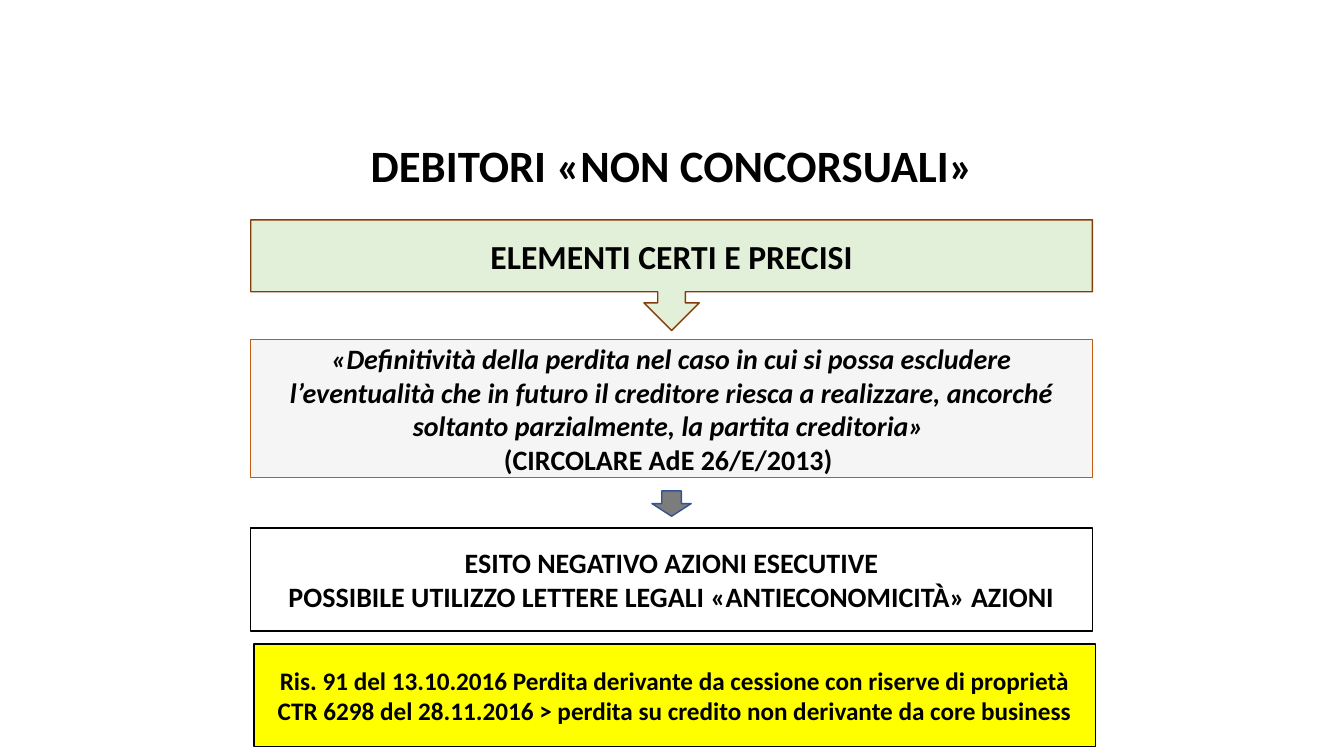
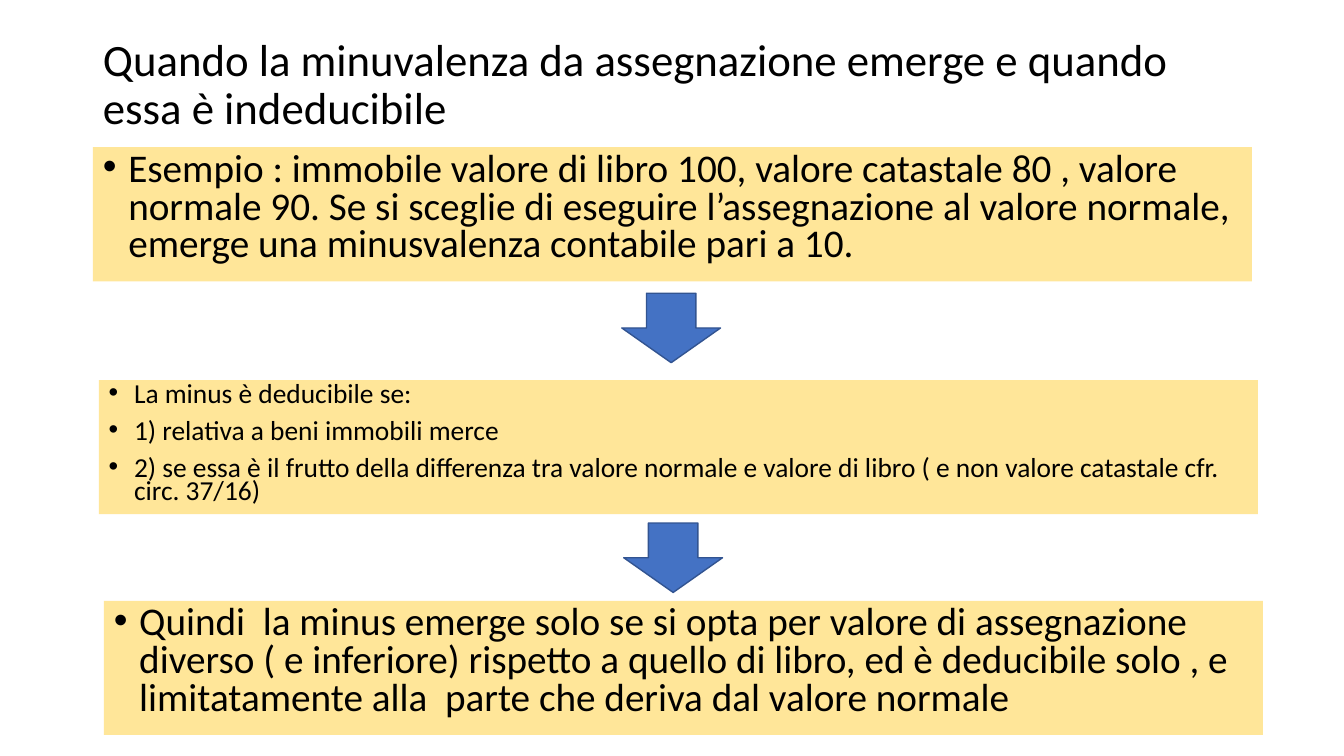
"""Build two slides on credit losses and on capital losses from assignments."""
from dataclasses import dataclass

from lxml import etree
from pptx import Presentation
from pptx import util as u
from pptx.dml.color import RGBColor
from pptx.enum import shapes, text
from pptx.oxml.ns import qn

Kind = shapes.MSO_SHAPE
Align = text.PP_ALIGN
Anchor = text.MSO_ANCHOR


@dataclass(frozen=True)
class Theme:
    """Colours, font and type sizes of the deck."""
    font: str = "Calibri"
    ink: str = "000000"
    white: str = "FFFFFF"
    green: str = "E2F0D9"
    brown: str = "843C0B"
    pale: str = "F5F5F5"
    orange: str = "C55A11"
    yellow: str = "FFFF00"
    sand: str = "FFE699"
    grey: str = "7C7C7C"
    blue: str = "4472C4"
    navy: str = "325491"
    title: float = 32
    lead: float = 28
    heading: float = 24
    body: float = 20
    points: float = 19.6
    note: float = 18


THEME = Theme()


def write(frame, paragraphs, size, bold=False, italics=(), align=Align.LEFT,
          anchor=Anchor.MIDDLE, spacing=1.0, before=0, bullet=False):
    """Fill a text frame with paragraphs; italics lists the slanted ones."""
    frame.word_wrap = True
    frame.auto_size = text.MSO_AUTO_SIZE.NONE
    frame.vertical_anchor = anchor
    for index, words in enumerate(paragraphs):
        para = frame.paragraphs[0] if index == 0 else frame.add_paragraph()
        para.alignment = align
        para.line_spacing = spacing
        para.space_before = u.Pt(before)
        span = para.add_run()
        span.text = words
        span.font.name = THEME.font
        span.font.size = u.Pt(size)
        span.font.bold = bold
        span.font.italic = index in italics
        span.font.color.rgb = RGBColor.from_string(THEME.ink)
        if bullet:
            add_bullet(para)


def add_bullet(para):
    """Give a paragraph a round bullet and a hanging indent."""
    props = para._p.get_or_add_pPr()
    indent = u.Cm(0.64)
    props.set("marL", str(indent))
    props.set("indent", str(-indent))
    etree.SubElement(props, qn("a:buFont")).set("typeface", "Arial")
    etree.SubElement(props, qn("a:buChar")).set("char", "•")


def place(shape, left, top, width, height):
    """Move and size a shape, in centimetres."""
    shape.left, shape.top = u.Cm(left), u.Cm(top)
    shape.width, shape.height = u.Cm(width), u.Cm(height)


def paint(shape, fill, line=None):
    """Set a flat fill and a thin line, or no line."""
    shape.fill.solid()
    shape.fill.fore_color.rgb = RGBColor.from_string(fill)
    if line:
        shape.line.color.rgb = RGBColor.from_string(line)
        shape.line.width = u.Pt(1)
    else:
        shape.line.fill.background()


class Board:
    """Hold the deck and its current slide, and draw elements on it."""

    def __init__(self):
        """Start a widescreen deck."""
        self.deck = Presentation()
        self.deck.slide_width = u.Cm(33.87)
        self.deck.slide_height = u.Cm(19.05)
        self.slide = None

    def page(self, layout):
        """Add a slide with the named layout."""
        self.slide = self.deck.slides.add_slide(
            self.deck.slide_layouts.get_by_name(layout))

    def title(self, words, area, **style):
        """Write the title in its placeholder."""
        holder = self.slide.shapes.title
        place(holder, *area)
        write(holder.text_frame, [words], THEME.title, **style)

    def shape(self, kind, area, fill, line=None):
        """Draw a flat preset shape."""
        shape = self.slide.shapes.add_shape(kind, *map(u.Cm, area))
        shape.shadow.inherit = False
        paint(shape, fill, line)
        return shape

    def box(self, paragraphs, area, fill, line, size, kind=Kind.RECTANGLE, italics=()):
        """Draw a framed box with bold centred text."""
        shape = self.shape(kind, area, fill, line)
        write(shape.text_frame, paragraphs, size, bold=True, italics=italics,
              align=Align.CENTER)

    def arrow(self, area, fill):
        """Draw an arrow that points down."""
        self.shape(Kind.DOWN_ARROW, area, fill, THEME.navy)

    def panel(self, paragraphs, left, top, size, spacing, holder=None):
        """Write a bulleted list on a sand panel."""
        area = (left, top, 29.21, 3.38)
        if holder is None:
            holder = self.shape(Kind.RECTANGLE, area, THEME.sand)
        else:
            place(holder, *area)
            paint(holder, THEME.sand)
        write(holder.text_frame, paragraphs, size, anchor=Anchor.TOP,
              spacing=spacing, before=10, bullet=True)


def debtors(board):
    """Build the slide on debtors outside insolvency."""
    left, width = 6.32, 21.21
    board.page("Title Only")
    board.title("DEBITORI «NON CONCORSUALI»", (4.24, 3.4, 25.4, 1.52),
                bold=True, align=Align.CENTER)
    board.box(["ELEMENTI CERTI E PRECISI"], (left, 5.54, width, 2.79),
              THEME.green, THEME.brown, THEME.heading, kind=Kind.DOWN_ARROW_CALLOUT)
    board.box(["«Definitività della perdita nel caso in cui si possa escludere "
               "l’eventualità che in futuro il creditore riesca a realizzare, "
               "ancorché soltanto parzialmente, la partita creditoria» ",
               "(CIRCOLARE AdE 26/E/2013) "],
              (left, 8.56, width, 3.48), THEME.pale, THEME.orange, THEME.body,
              italics=(0,))
    board.arrow((16.43, 12.37, 0.99, 0.64), THEME.grey)
    board.box(["ESITO NEGATIVO AZIONI ESECUTIVE",
               "POSSIBILE UTILIZZO LETTERE LEGALI «ANTIECONOMICITÀ» AZIONI"],
              (left, 13.31, width, 2.59), THEME.white, THEME.ink, THEME.body)
    board.box(["Ris. 91 del 13.10.2016 Perdita derivante da cessione con riserve "
               "di proprietà",
               "CTR 6298 del 28.11.2016 > perdita su credito non derivante da core "
               "business"],
              (6.4, 16.23, width, 2.59), THEME.yellow, THEME.ink, THEME.note)


def capital_loss(board):
    """Build the slide on deductible capital losses."""
    board.page("Title and Content")
    board.title("Quando la minuvalenza da assegnazione emerge e quando essa è "
                "indeducibile", (2.34, 1.02, 29.21, 2.29), spacing=0.9)
    board.panel(["Esempio : immobile valore di libro 100, valore catastale 80 , "
                 "valore normale 90. Se si sceglie di eseguire l’assegnazione al "
                 "valore normale, emerge una minusvalenza contabile pari a 10."],
                2.34, 3.71, THEME.lead, 0.8, holder=board.slide.placeholders[1])
    board.panel(["La minus è deducibile se:",
                 "1) relativa a beni immobili merce",
                 "2) se essa è il frutto della differenza tra valore normale e "
                 "valore di libro ( e non valore catastale cfr. circ. 37/16)"],
                2.49, 9.58, THEME.points, 0.7)
    board.panel(["Quindi  la minus emerge solo se si opta per valore di "
                 "assegnazione diverso ( e inferiore) rispetto a quello di libro, "
                 "ed è deducibile solo , e limitatamente alla  parte che deriva "
                 "dal valore normale"],
                2.62, 15.14, THEME.lead, 0.8)
    for left, top in ((15.67, 7.39), (15.72, 13.18)):
        board.arrow((left, top, 2.49, 1.75), THEME.blue)


def main():
    """Build and save the deck."""
    board = Board()
    debtors(board)
    capital_loss(board)
    board.deck.save("out.pptx")


if __name__ == "__main__":
    main()
